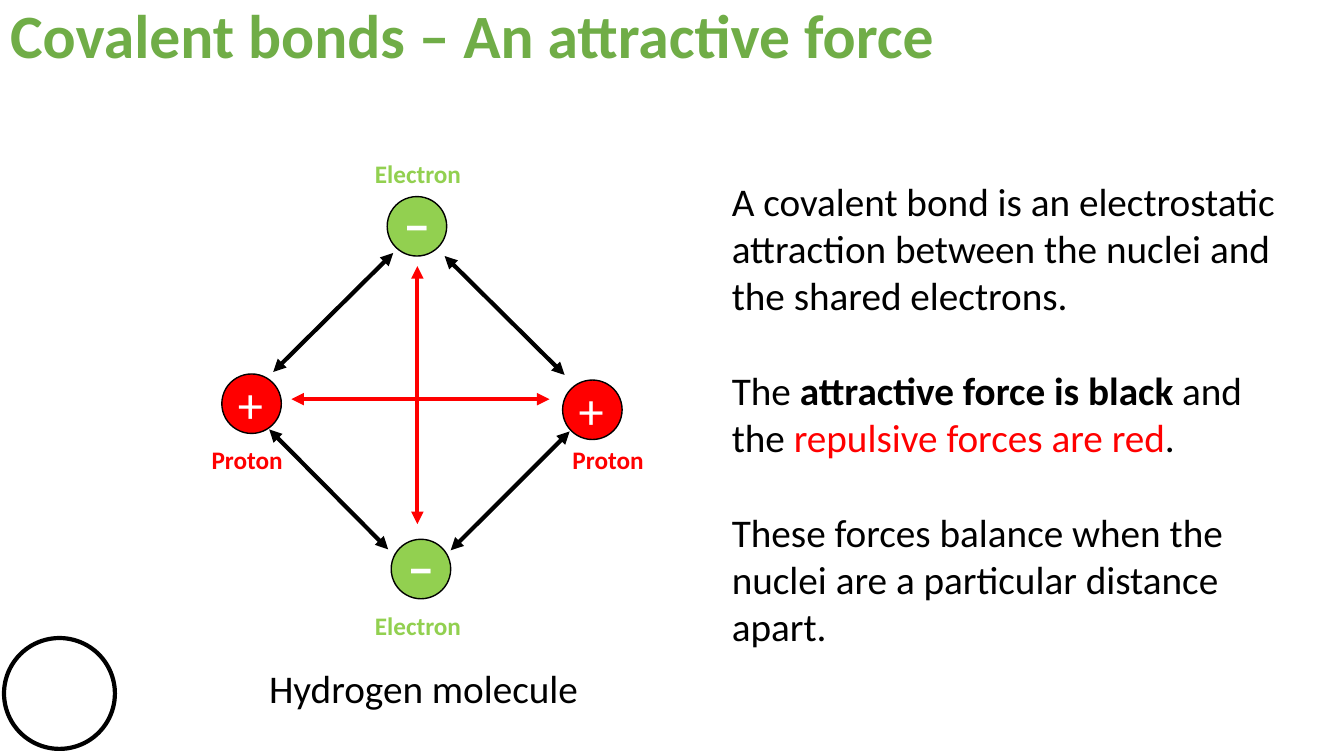
from lxml.etree import SubElement
from pptx import Presentation
from pptx.dml.color import RGBColor as RGB
from pptx.enum.shapes import MSO_CONNECTOR as CONN, MSO_SHAPE as SHAPE
from pptx.enum.text import MSO_ANCHOR as ANCHOR, PP_ALIGN as ALIGN
from pptx.oxml.ns import qn
from pptx.util import Inches, Pt

COLORS = {"title": "70AD47", "electron": "92D050", "proton": "FF0000",
          "repulsion": "FF0000", "attraction": "000000",
          "text": "000000", "white": "FFFFFF"}


class Board:
    """Holds the style and the current slide."""

    def __init__(self, prs, font="Calibri"):
        self.s = prs.slides.add_slide(prs.slide_layouts[5])
        self.font = font

    def color(self, name):
        return RGB.from_string(COLORS[name])

    def run(self, p, text, size, color="text", bold=False):
        r = p.add_run()
        r.text = text
        r.font.name, r.font.size, r.font.bold = self.font, Pt(size), bold
        r.font.color.rgb = self.color(color)

    def title(self, text, size):
        sp = self.s.shapes.title
        sp.left, sp.top = Inches(0), Inches(0)
        sp.width, sp.height = Inches(13.33), Inches(1.45)
        sp.text_frame.vertical_anchor = ANCHOR.TOP
        p = sp.text_frame.paragraphs[0]
        p.alignment, p.line_spacing = ALIGN.LEFT, 0.9
        self.run(p, text, size, "title", True)

    def text(self, x, y, w, h, paragraphs, align=ALIGN.LEFT, gap=0):
        tf = self.s.shapes.add_textbox(
            Inches(x), Inches(y), Inches(w), Inches(h)).text_frame
        tf.word_wrap = True
        for i, runs in enumerate(paragraphs):
            p = tf.add_paragraph() if i else tf.paragraphs[0]
            p.alignment = align
            if i:
                p.space_before = Pt(gap)
            for run in runs:
                self.run(p, *run)

    def circle(self, x, y, d, fill, width):
        sp = self.s.shapes.add_shape(
            SHAPE.OVAL, Inches(x), Inches(y), Inches(d), Inches(d))
        sp.shadow.inherit = False
        sp.fill.solid()
        sp.fill.fore_color.rgb = self.color(fill)
        sp.line.color.rgb = self.color("text")
        sp.line.width = Pt(width)

    def particle(self, x, y, kind, sign, dx, dy, align):
        d = 0.59
        self.circle(x, y, d, kind, 1)
        self.text(x + dx, y + dy, d, 0.71,
                  [[(sign, 36, "white", kind == "electron")]], align)

    def arrow(self, x1, y1, x2, y2, color):
        sp = self.s.shapes.add_connector(
            CONN.STRAIGHT, Inches(x1), Inches(y1), Inches(x2), Inches(y2))
        sp.line.color.rgb = self.color(color)
        sp.line.width = Pt(3)
        ln = sp.line._get_or_add_ln()
        for end in ("a:headEnd", "a:tailEnd"):
            SubElement(ln, qn(end), type="triangle")
        SubElement(sp._element.spPr, qn("a:effectLst"))


def main():
    prs = Presentation()
    prs.slide_width, prs.slide_height = Inches(13.33), Inches(7.5)
    b = Board(prs)
    b.circle(0.04, 6.33, 1.1, "white", 3)

    for x, y in ((3.84, 1.95), (3.88, 5.35)):
        b.particle(x, y, "electron", "−", 0, -0.07, ALIGN.CENTER)
    for x, y in ((5.58, 3.77), (2.2, 3.71)):
        b.particle(x, y, "proton", "+", 0.06, -0.06, ALIGN.LEFT)

    for ends in ((2.89, 3.96, 5.45, 3.96), (4.14, 2.64, 4.14, 5.2)):
        b.arrow(*ends, "repulsion")
    for ends in ((4.47, 5.46, 5.65, 4.28), (2.71, 3.69, 3.9, 2.51),
                 (4.41, 2.54, 5.6, 3.72), (2.67, 4.26, 3.85, 5.45)):
        b.arrow(*ends, "attraction")

    for x, y, kind in ((3.62, 1.52, "electron"), (3.62, 6.01, "electron"),
                       (5.58, 4.36, "proton"), (2, 4.36, "proton")):
        b.text(x, y, 1.1, 0.4, [[(kind.capitalize(), 18, kind, True)]])

    b.text(1.99, 6.54, 4.42, 0.57, [[("Hydrogen molecule", 28)]], ALIGN.CENTER)
    b.text(7.16, 1.71, 5.85, 4.81, [
        [("A covalent bond is an electrostatic attraction between the nuclei "
          "and the shared electrons.", 28)],
        [("The ", 28), ("attractive force is black ", 28, "text", True),
         ("and the ", 28), ("repulsive forces are red", 28, "repulsion"),
         (".", 28)],
        [("These forces balance when the nuclei are a particular distance "
          "apart.", 28)],
    ], gap=34)
    b.title("Covalent bonds – An attractive force", 44)
    prs.save("out.pptx")


if __name__ == "__main__":
    main()
